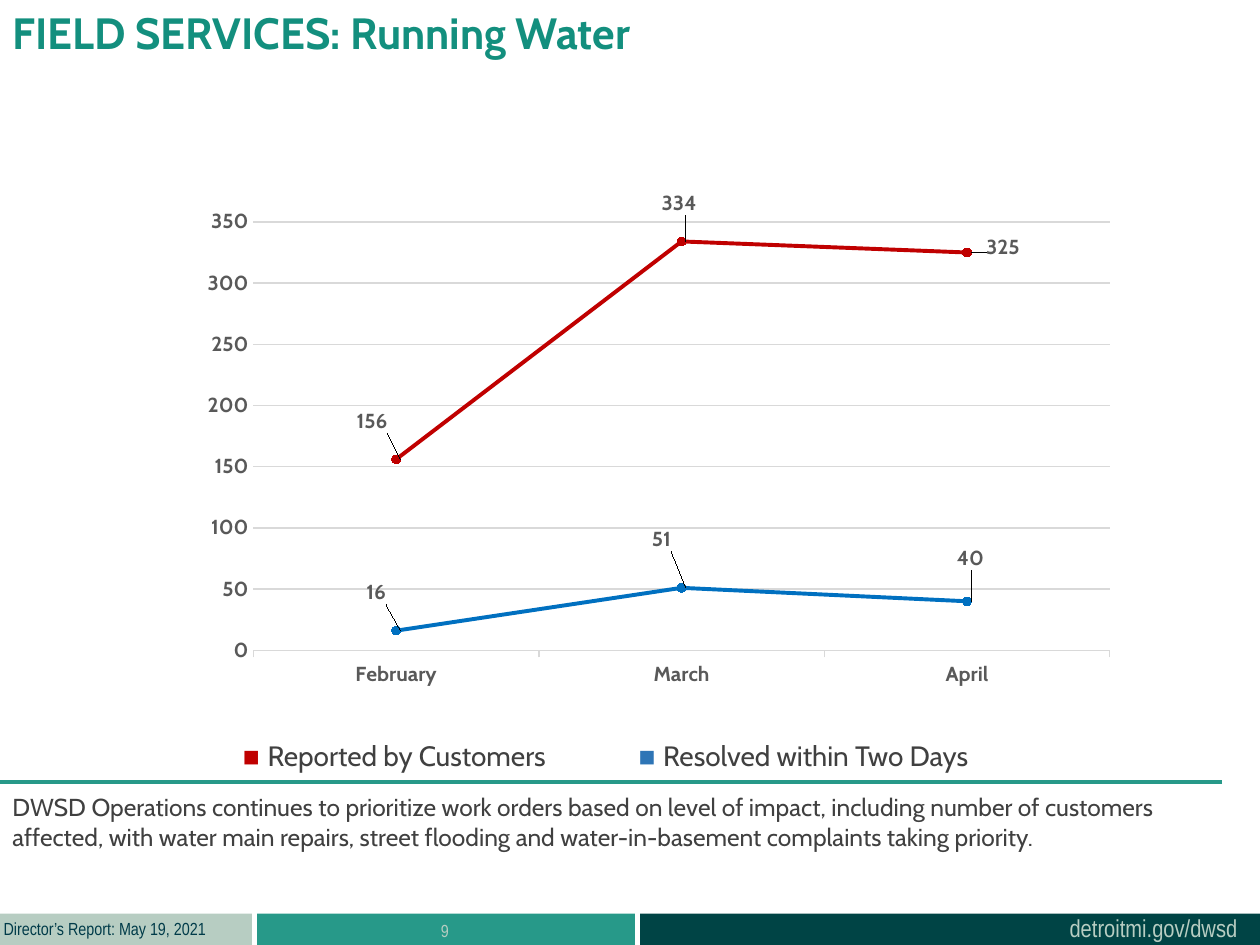
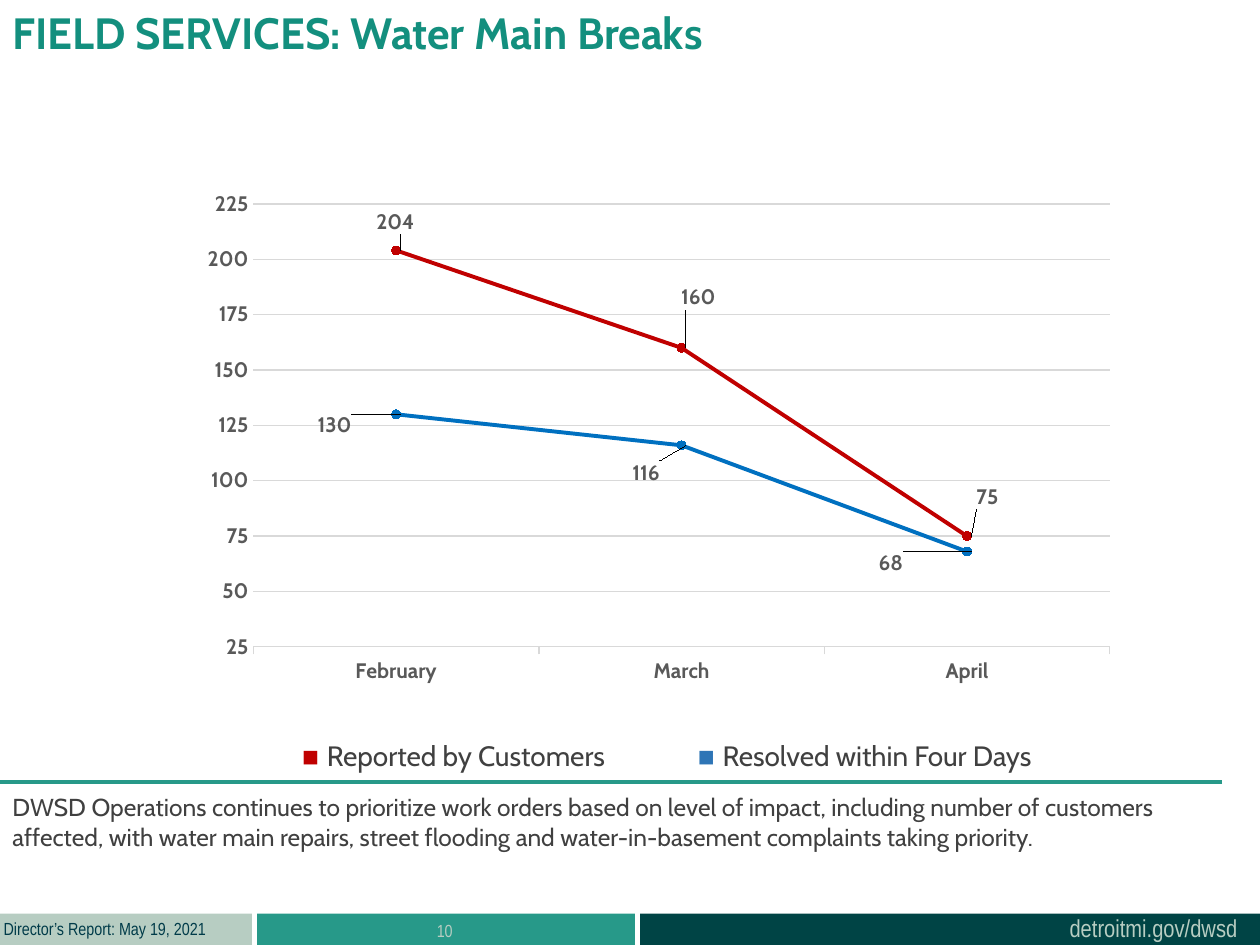
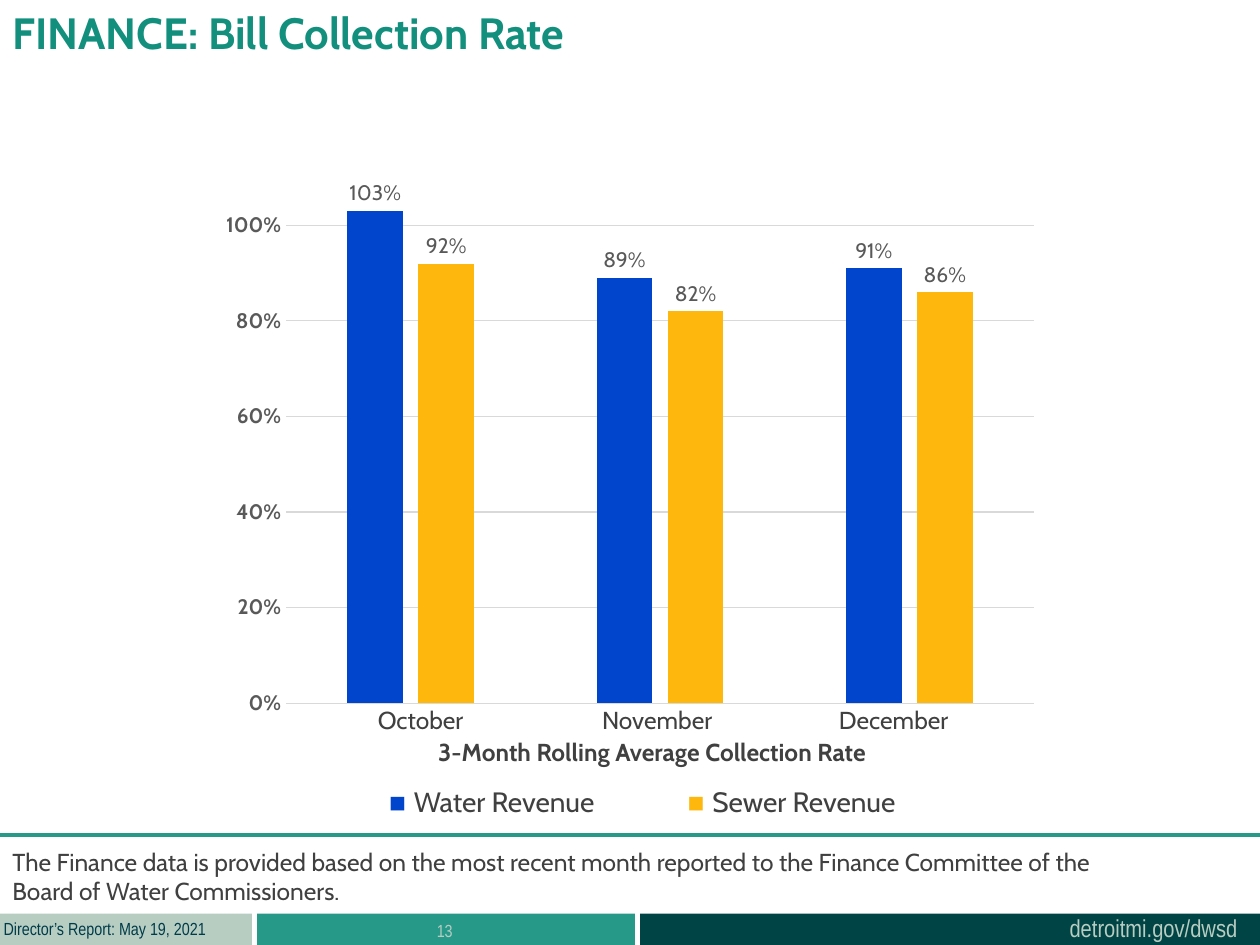
from lxml import etree
from pptx import Presentation
from pptx.chart.data import CategoryChartData
from pptx.dml.color import RGBColor
from pptx.enum.chart import XL_CHART_TYPE, XL_LABEL_POSITION, XL_MARKER_STYLE, XL_TICK_MARK
from pptx.enum.shapes import MSO_CONNECTOR, MSO_SHAPE
from pptx.enum.text import PP_ALIGN
from pptx.oxml.ns import qn
from pptx.util import Inches, Pt

LINE = XL_CHART_TYPE.LINE_MARKERS
COLUMN = XL_CHART_TYPE.COLUMN_CLUSTERED
CIRCLE = XL_MARKER_STYLE.CIRCLE
RIGHT_OF_POINT = XL_LABEL_POSITION.RIGHT
ABOVE_BAR = XL_LABEL_POSITION.OUTSIDE_END
TICK_OUT, TICK_NONE = XL_TICK_MARK.OUTSIDE, XL_TICK_MARK.NONE
RECTANGLE = MSO_SHAPE.RECTANGLE
STRAIGHT = MSO_CONNECTOR.STRAIGHT
LEFT, CENTER = PP_ALIGN.LEFT, PP_ALIGN.CENTER

TEAL, DARK_TEAL, SAGE, NAVY = "279989", "004445", "B7CDC2", "003B49"
TITLE_GREEN, INK, GRAY, GRID = "138F7E", "404040", "595959", "D9D9D9"
RED, BLUE, LEGEND_BLUE = "C00000", "0070C0", "2E75B6"
WATER_BLUE, SEWER_GOLD = "0045CB", "FEB70D"
BODY, NARROW = "Cabin", "Arial Narrow"

PRIORITY_NOTE = [
    "DWSD Operations continues to prioritize work orders based on level of impact, "
    "including number of customers affected, with water main repairs, street flooding "
    "and water-in-basement complaints taking priority."
]
FINANCE_NOTE = [
    "The Finance data is provided based on the most recent month reported to the "
    "Finance Committee of the",
    "Board of Water Commissioners.",
]

# Label shifts are fractions of the chart size, measured from the right of each point
FIELD_SLIDES = [
    dict(title="FIELD SERVICES: Running Water", page=9, scale=(0, 350, 50),
         reported=(156, 334, 325), resolved=(16, 51, 40),
         shifts=[(-0.05, -0.07), (-0.03, -0.07), (0.01, -0.01),
                 (-0.04, -0.07), (-0.04, -0.09), (-0.02, -0.08)],
         legend_box=(1.83, 5.81, 6.04, 0.37), days="Resolved within Two Days"),
    dict(title="FIELD SERVICES: Water Main Breaks", page=10, scale=(25, 225, 25),
         reported=(204, 160, 75), resolved=(130, 116, 68),
         shifts=[(-0.03, -0.05), (-0.01, -0.09), (0, -0.07),
                 (-0.09, 0.02), (-0.06, 0.05), (-0.1, 0.02)],
         legend_box=(2.3, 5.81, 6.21, 0.37), days="Resolved within Four Days"),
]


def color(value):
    return RGBColor.from_string(value)


def set_font(font, size, hue, bold=False, face=BODY):
    font.size, font.bold, font.name = Pt(size), bold, face
    font.color.rgb = color(hue)


def add_layout(element, position, **fractions):
    """Put a manual layout into a chart element at the given child position."""
    for old in element.findall(qn("c:layout")):
        element.remove(old)
    layout = etree.Element(qn("c:layout"))
    manual = etree.SubElement(layout, qn("c:manualLayout"))
    for tag, value in fractions.items():
        etree.SubElement(manual, qn(f"c:{tag}")).set("val", str(value))
    element.insert(position, layout)


class Report:
    def __init__(self):
        self.deck = Presentation()
        self.deck.slide_width, self.deck.slide_height = Inches(10), Inches(7.5)
        self.slide = None

    def new_slide(self, title, page):
        self.slide = self.deck.slides.add_slide(self.deck.slide_layouts[6])
        # Footer bands
        for left, width, fill in ((2.04, 3, TEAL), (5.08, 5, DARK_TEAL), (0, 2, SAGE)):
            self.band(left, 7.25, width, 0.25, fill)
        self.text((8.39, 7.2, 1.55, 0.34), ["detroitmi.gov/dwsd"], 14, SAGE,
                  face=NARROW, wrap=False)
        self.text((-0.07, 7.24, 1.88, 0.27), ["Director’s Report: May 19, 2021"], 10, NAVY,
                  face=NARROW, wrap=False)
        self.text((2.03, 7.25, 3, 0.4), [str(page)], 10, SAGE, face=NARROW, align=CENTER)
        self.text((0, 0, 7.59, 0.77), [title], 25, TITLE_GREEN, bold=True)

    def band(self, left, top, width, height, fill):
        band = self.slide.shapes.add_shape(
            RECTANGLE, Inches(left), Inches(top), Inches(width), Inches(height))
        band.shadow.inherit = False
        band.fill.solid()
        band.fill.fore_color.rgb = color(fill)
        band.line.fill.background()

    def paragraph(self, box, wrap=True, tabs=()):
        frame = self.slide.shapes.add_textbox(*map(Inches, box)).text_frame
        frame.word_wrap = wrap
        paragraph = frame.paragraphs[0]
        if tabs:
            stops = etree.SubElement(paragraph._p.get_or_add_pPr(), qn("a:tabLst"))
            for stop in tabs:
                etree.SubElement(stops, qn("a:tab"), pos=str(Inches(stop)), algn="l")
        return paragraph

    def run(self, paragraph, words, size, hue, bold=False, face=BODY):
        run = paragraph.add_run()
        run.text = words
        set_font(run.font, size, hue, bold, face)

    def text(self, box, lines, size, hue, bold=False, face=BODY, align=LEFT,
             wrap=True, tabs=()):
        paragraph = self.paragraph(box, wrap, tabs)
        paragraph.alignment = align
        for number, line in enumerate(lines):
            if number:
                paragraph.add_line_break()
            self.run(paragraph, line, size, hue, bold, face)

    def legend(self, box, entries, tab):
        paragraph = self.paragraph(box, tabs=[tab])
        for number, (label, hue) in enumerate(entries):
            if number:
                self.run(paragraph, "\t", 16, INK)
            self.run(paragraph, "■ ", 16, hue, face="Arial")
            self.run(paragraph, label, 16, INK)

    def rule(self, top, width):
        rule = self.slide.shapes.add_connector(
            STRAIGHT, Inches(width), Inches(top), Inches(0), Inches(top))
        rule.line.color.rgb = color(TEAL)
        rule.line.width = Pt(2.25)
        etree.SubElement(rule._element.spPr, qn("a:effectLst"))

    def chart(self, kind, box, categories, series, scale, number_format, plot_area):
        data = CategoryChartData()
        data.categories = categories
        for name, values, _ in series:
            data.add_series(name, values)
        chart = self.slide.shapes.add_chart(kind, *map(Inches, box), data).chart
        chart.has_legend = chart.has_title = False
        set_font(chart.font, 10, "000000", face="Calibri")
        chart.plots[0].vary_by_categories = False
        x, y, w, h = plot_area
        add_layout(chart.element.find(".//" + qn("c:plotArea")), 0, layoutTarget="inner",
                   xMode="edge", yMode="edge", x=x, y=y, w=w, h=h)

        axis = chart.value_axis
        axis.minimum_scale, axis.maximum_scale, axis.major_unit = scale
        axis.major_tick_mark = TICK_NONE
        axis.format.line.fill.background()
        axis.major_gridlines.format.line.color.rgb = color(GRID)
        axis.major_gridlines.format.line.width = Pt(0.75)
        axis.tick_labels.number_format = number_format
        axis.tick_labels.number_format_is_linked = False
        set_font(axis.tick_labels.font, 12, GRAY, bold=True)

        for drawn, (_, _, hue) in zip(chart.plots[0].series, series):
            labels = drawn.data_labels
            labels.show_value = True
            labels.number_format = number_format
            labels.number_format_is_linked = False
            set_font(labels.font, 12, GRAY, bold=kind == LINE)
            if kind == COLUMN:
                labels.position = ABOVE_BAR
                drawn.format.fill.solid()
                drawn.format.fill.fore_color.rgb = color(hue)
        return chart

    def line_chart(self, series, scale, shifts):
        chart = self.chart(LINE, (1.12, 1.52, 7.75, 4.45), ("February", "March", "April"),
                           series, scale, "#,##0", (0.115, 0.021, 0.877, 0.791))
        axis = chart.category_axis
        axis.major_tick_mark = TICK_OUT
        axis.format.line.color.rgb = color(GRID)
        axis.format.line.width = Pt(0.75)
        set_font(axis.tick_labels.font, 12, GRAY, bold=True)
        for drawn, (_, values, hue) in zip(chart.plots[0].series, series):
            drawn.smooth = False
            drawn.format.line.color.rgb = color(hue)
            drawn.format.line.width = Pt(2.25)
            drawn.marker.style, drawn.marker.size = CIRCLE, 5
            drawn.marker.format.fill.solid()
            drawn.marker.format.fill.fore_color.rgb = color(hue)
            drawn.marker.format.line.color.rgb = color(hue)
            for index in range(len(values)):
                label = drawn.points[index].data_label
                label.position = RIGHT_OF_POINT
                set_font(label.font, 12, GRAY, bold=True)
        for label, (x, y) in zip(chart.element.iter(qn("c:dLbl")), shifts):
            add_layout(label, 1, x=x, y=y)

    def column_chart(self, series):
        chart = self.chart(COLUMN, (1.67, 1.32, 6.67, 4.44), ("1", "2", "3"), series,
                           (0, 1.1, 0.2), "0%", (0.09, 0.02, 0.89, 0.94))
        chart.category_axis.visible = False
        chart.plots[0].gap_width, chart.plots[0].overlap = 219, -27


def main():
    report = Report()

    # Field services
    for field in FIELD_SLIDES:
        report.new_slide(field["title"], field["page"])
        report.line_chart([("Series 1", field["reported"], RED),
                           ("Series 2", field["resolved"], BLUE)],
                          field["scale"], field["shifts"])
        report.text((0, 6.24, 9.7, 0.57), PRIORITY_NOTE, 14, INK)
        report.rule(6.21, 9.7)
        report.legend(field["legend_box"], [("Reported by Customers", RED),
                                            (field["days"], LEGEND_BLUE)], 3.14)

    # Finance
    report.new_slide("FINANCE: Bill Collection Rate", 13)
    report.column_chart([("Water", (1.03, 0.89, 0.91), WATER_BLUE),
                         ("Sewer", (0.92, 0.82, 0.86), SEWER_GOLD)])
    report.rule(6.63, 10)
    report.text((3.38, 5.8, 3.6, 0.34), ["3-Month Rolling Average Collection Rate"], 14, INK,
                bold=True, wrap=False)
    report.text((0, 6.67, 10, 0.57), FINANCE_NOTE, 14, INK)
    report.legend((2.99, 6.18, 4.37, 0.37), [("Water Revenue", WATER_BLUE),
                                             ("Sewer Revenue", SEWER_GOLD)], 2.37)
    report.text((2.9, 5.55, 4.97, 0.34), ["October\tNovember\tDecember"], 14, INK,
                tabs=(1.78, 3.66))

    report.deck.save("out.pptx")


if __name__ == "__main__":
    main()
